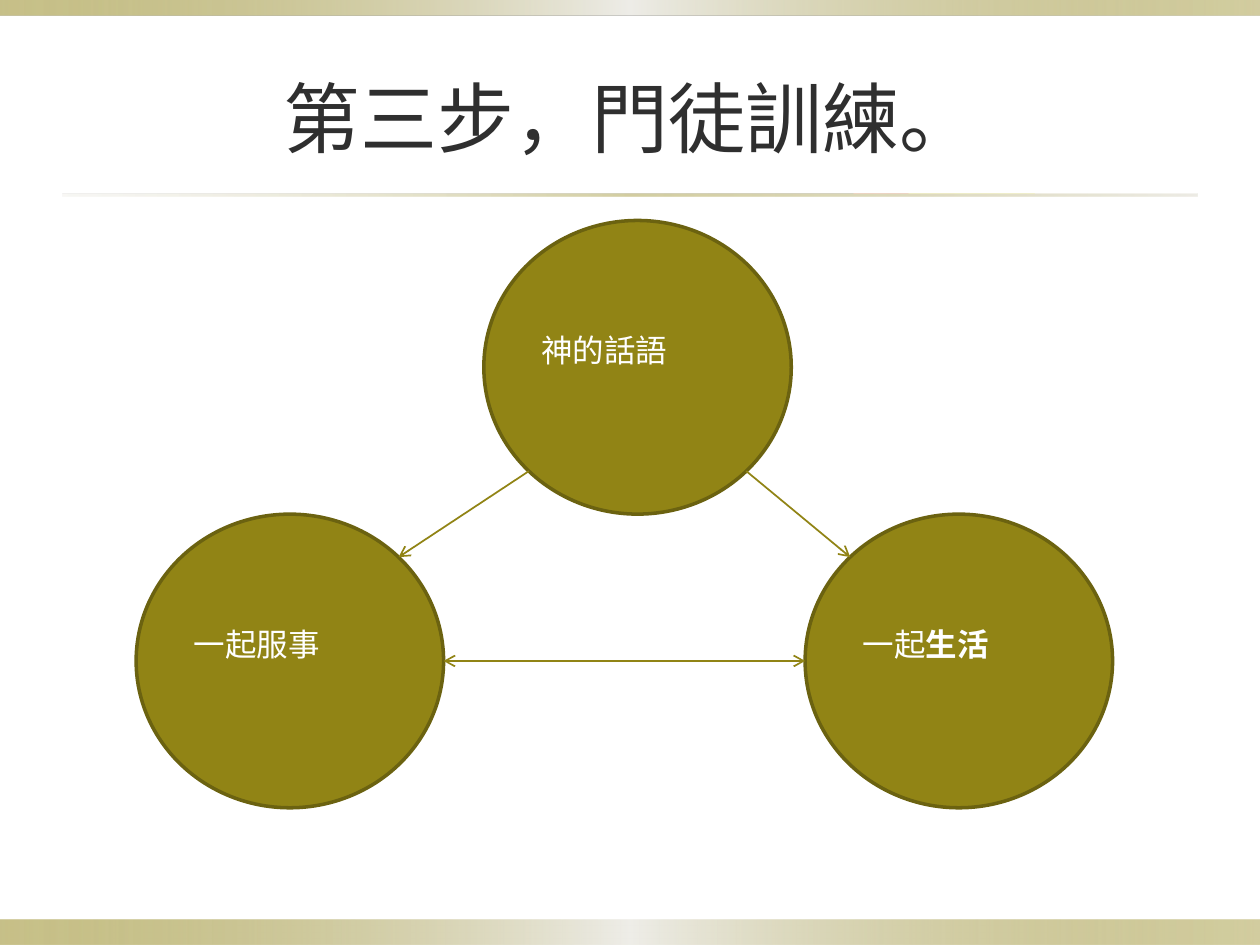
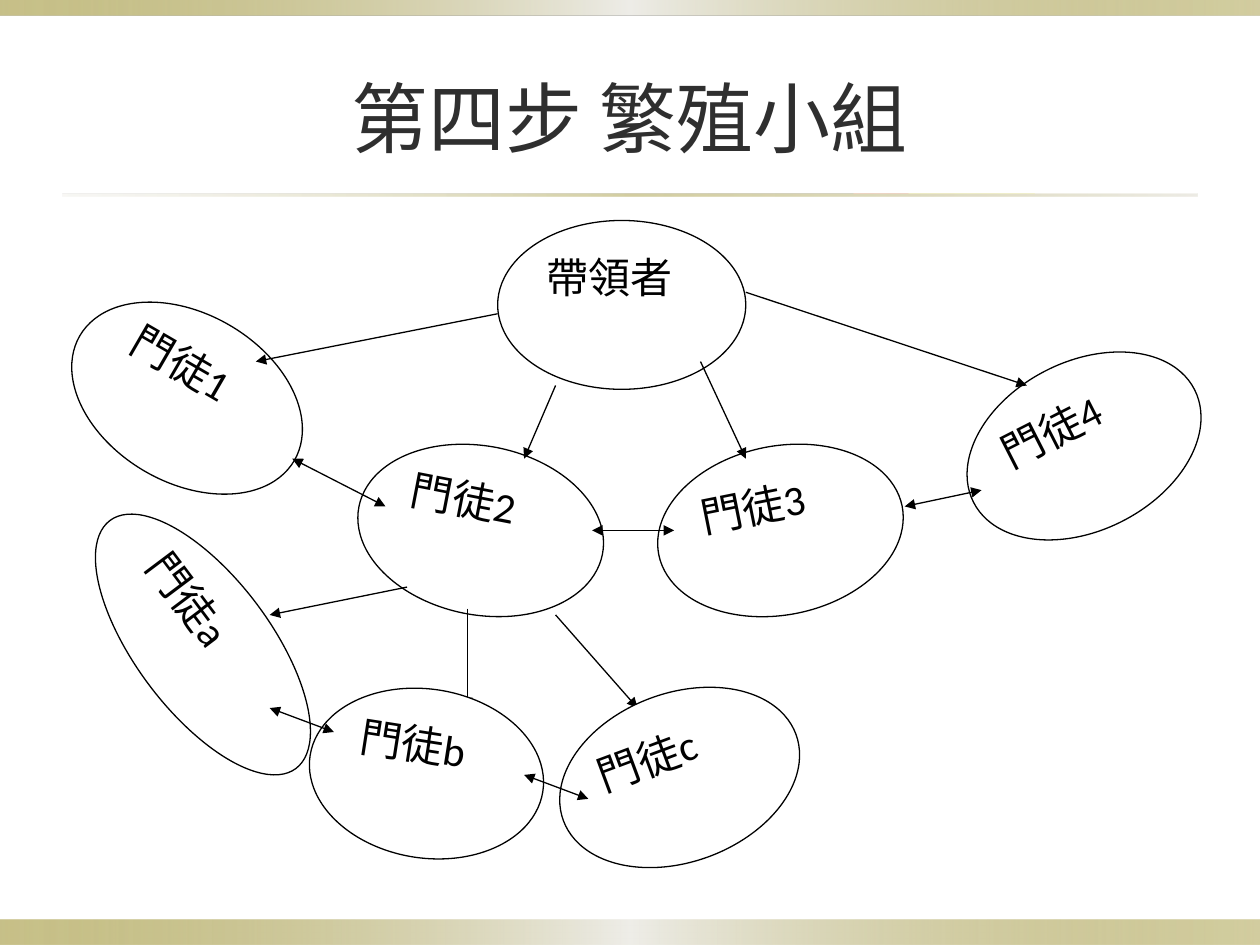
import math

import pptx
import pptx.dml.color
import pptx.enum.shapes
import pptx.enum.text
import pptx.oxml
import pptx.oxml.ns
import pptx.util

Pt = pptx.util.Pt
KIND = pptx.enum.shapes.MSO_SHAPE
ALIGN = pptx.enum.text.PP_ALIGN
ANCHOR = pptx.enum.text.MSO_ANCHOR

HUES = {
    "olive": "918415",
    "rim": "6B6210",
    "pale": "EEEDE8",
    "sand": "DCD9CC",
    "title": "2F2F2F",
    "white": "FFFFFF",
    "black": "000000",
}
BAND = [(0, "olive", 50), (50, "pale", 100), (100, "olive", 40)]
RULE = [(0, "sand", 20), (50, "olive", 40), (100, "sand", 50)]
BANDS = [
    ((0, 525.6, 720, 14.4), BAND),
    ((0, 0, 720, 8.64), BAND),
    ((36, 110.9, 648, 1.44), RULE),
]

DISC = (175.7, 167.8)
OVAL = (141.8, 96.5)

TEAM = [
    ("帶領者", (284.4, 126), OVAL, 0),
    ("門徒1", (36, 179.3), OVAL, 30.2),
    ("門徒2", (203.8, 254.9), OVAL, 11),
    ("門徒3", (375.1, 254.9), OVAL, -11.3),
    ("門徒4", (548.6, 206.6), OVAL, -27),
]
DOWN = [
    ((284.4, 179.3), (146.2, 206.6)),
    ((317.5, 220.3), (299.5, 262.1)),
    ((400.3, 206.6), (426.2, 262.1)),
    ((426.2, 167), (586.8, 220.3)),
    ((232.6, 335.5), (154.1, 351.4)),
    ((267.1, 347.8), (267.1, 404.6)),
    ((317.5, 351.4), (364.3, 404.6)),
]
HEIRS = [
    ("門徒a", (27.4, 329.8), (177.1, 77), 53.1),
    ("門徒b", (176.4, 393.8), (134.6, 96.5), 8.9),
    ("門徒c", (317.5, 396), OVAL, -20.4),
]
PEERS = [
    ((167, 262.1), (220.3, 289.4)),
    ((338.4, 303.1), (385.2, 303.1)),
    ((517, 289.4), (560.9, 280.1)),
    ((154.1, 404.6), (190.8, 418.3)),
    ((299.5, 442.8), (336.2, 456.5)),
]


def tint(name):
    return pptx.dml.color.RGBColor.from_string(HUES[name])


def add_run(para, text, size, font, hue, bold=None):
    run = para.add_run()
    run.text = text
    run.font.size = Pt(size)
    run.font.name = font
    run.font.bold = bold
    run.font.color.rgb = tint(hue)


def add_shape(slide, kind, box):
    shape = slide.shapes.add_shape(kind, *map(Pt, box))
    shape.shadow.inherit = False
    return shape


def add_band(slide, box, stops):
    band = add_shape(slide, KIND.RECTANGLE, box)
    band.line.fill.background()
    band.fill.background()
    marks = "".join(
        f'<a:gs pos="{pos * 1000}"><a:srgbClr val="{HUES[hue]}">'
        f'<a:alpha val="{alpha * 1000}"/></a:srgbClr></a:gs>'
        for pos, hue, alpha in stops
    )
    fill = pptx.oxml.parse_xml(
        f'<a:gradFill {pptx.oxml.ns.nsdecls("a")} rotWithShape="1">'
        f'<a:gsLst>{marks}</a:gsLst><a:lin ang="0" scaled="0"/></a:gradFill>'
    )
    props = band.element.spPr
    props.replace(props.find(pptx.oxml.ns.qn("a:noFill")), fill)


def add_slide(deck, title):
    slide = deck.slides.add_slide(deck.slide_layouts[5])
    for box, stops in BANDS:
        add_band(slide, box, stops)
    head = slide.shapes.title
    head.left, head.top, head.width, head.height = map(Pt, (36, 21.6, 648, 90))
    frame = head.text_frame
    frame.vertical_anchor = ANCHOR.MIDDLE
    para = frame.paragraphs[0]
    para.alignment = ALIGN.CENTER
    add_run(para, title, 44, "Lato", "title")
    return slide


def add_node(slide, kind, spot, size, fill, edge, width, align):
    node = add_shape(slide, kind, spot + size)
    node.fill.solid()
    node.fill.fore_color.rgb = tint(fill)
    node.line.color.rgb = tint(edge)
    node.line.width = Pt(width)
    node.text_frame.word_wrap = True
    node.text_frame.paragraphs[0].alignment = align
    return node


def add_disc(slide, spot, parts):
    disc = add_node(slide, KIND.OVAL, spot, DISC, "olive", "rim", 2, ALIGN.LEFT)
    frame = disc.text_frame
    frame.vertical_anchor = ANCHOR.MIDDLE
    frame.margin_bottom = Pt(23)
    for text, bold in parts:
        add_run(frame.paragraphs[0], text, 18, "Lato", "white", bold)


def add_oval(slide, text, spot, size, turn):
    oval = add_node(slide, KIND.FLOWCHART_CONNECTOR, spot, size,
                    "white", "black", 0.75, ALIGN.JUSTIFY)
    oval.rotation = turn
    oval.text_frame.vertical_anchor = ANCHOR.TOP
    add_run(oval.text_frame.paragraphs[0], text, 24, "Calibri", "black")


def add_arrow(slide, start, end, hue, width, tip, both=False):
    arrow = slide.shapes.add_connector(
        pptx.enum.shapes.MSO_CONNECTOR.STRAIGHT, *map(Pt, start + end))
    arrow.line.color.rgb = tint(hue)
    arrow.line.width = Pt(width)
    props = arrow.element.spPr
    line = props.get_or_add_ln()
    space = pptx.oxml.ns.nsdecls("a")
    for side in ("headEnd", "tailEnd") if both else ("tailEnd",):
        line.append(pptx.oxml.parse_xml(f'<a:{side} {space} type="{tip}"/>'))
    props.append(pptx.oxml.parse_xml(f"<a:effectLst {space}/>"))


def rim(spot, angle):
    turn = math.radians(angle)
    wide, high = DISC
    return (spot[0] + wide / 2 * (1 + math.cos(turn)),
            spot[1] + high / 2 * (1 + math.sin(turn)))


def draw_train(deck):
    slide = add_slide(deck, "第三步，門徒訓練。")
    word, serve, life = (276.5, 126), (77.8, 293.8), (460.1, 293.8)
    add_disc(slide, word, [("神的話語", None)])
    add_disc(slide, serve, [("一起服事", None)])
    add_disc(slide, life, [("一起", None), ("生活", True)])
    for start, end, both in [
        (rim(word, 135), rim(serve, -45), False),
        (rim(word, 45), rim(life, -135), False),
        (rim(life, 180), rim(serve, 0), True),
    ]:
        add_arrow(slide, start, end, "olive", 1, "arrow", both)


def draw_group(deck):
    slide = add_slide(deck, "第四步 繁殖小組")
    for ovals, links, both in [(TEAM, DOWN, False), (HEIRS, PEERS, True)]:
        for oval in ovals:
            add_oval(slide, *oval)
        for start, end in links:
            add_arrow(slide, start, end, "black", 0.75, "triangle", both)


def main():
    deck = pptx.Presentation()
    deck.slide_width, deck.slide_height = Pt(720), Pt(540)
    draw_train(deck)
    draw_group(deck)
    deck.save("out.pptx")


if __name__ == "__main__":
    main()
